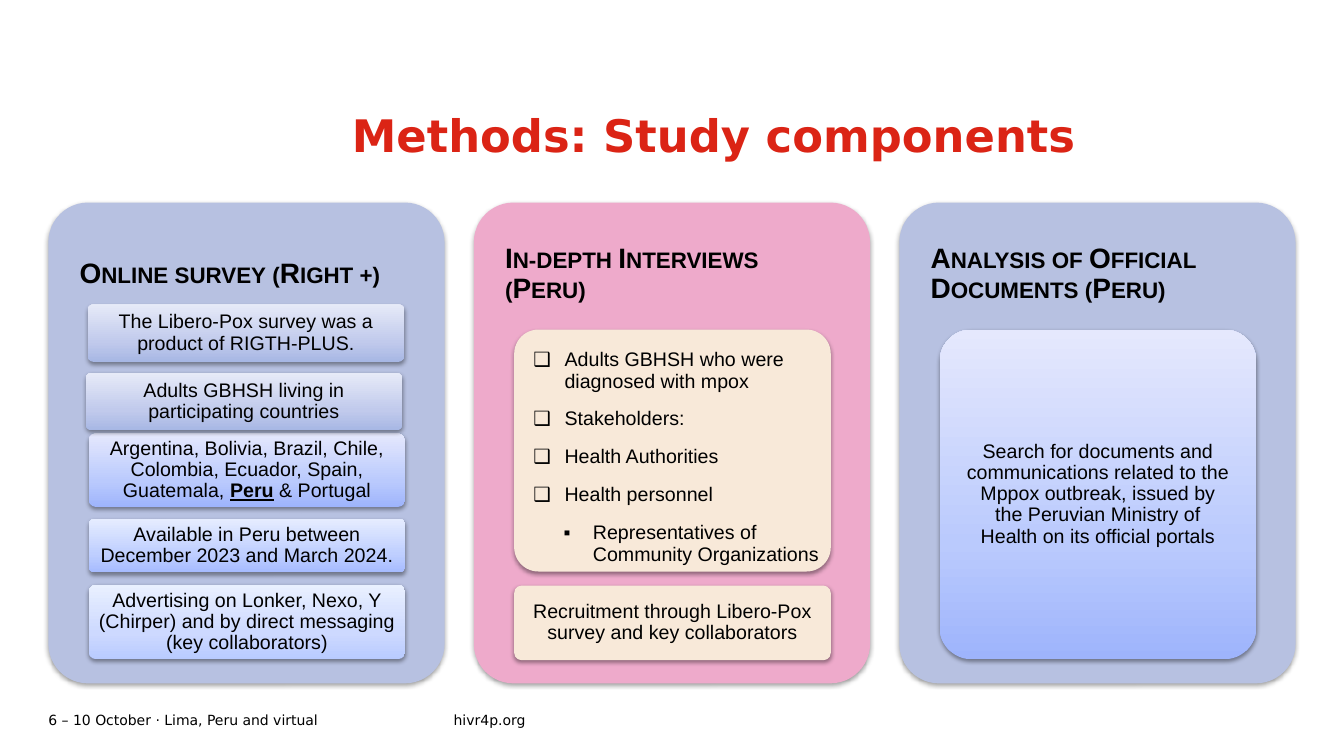
import dataclasses
import pptx
import pptx.dml.color
import pptx.enum.shapes
import pptx.enum.text
import pptx.oxml
import pptx.oxml.ns
import pptx.util

ALIGN = pptx.enum.text.PP_ALIGN
ANCHOR = pptx.enum.text.MSO_ANCHOR
NS = pptx.oxml.ns.nsdecls("a")


@dataclasses.dataclass(frozen=True)
class Theme:
    sans: str = "Arial"
    wide: str = "DejaVu Sans"
    ink: str = "000000"
    red: str = "DB2415"
    blue: str = "B7C1E1"
    pink: str = "EEAACB"
    cream: str = "F8E9D9"
    # Gradients run from the bottom edge to the top edge
    steel: tuple = ("A7B7E4", "C1CAEC", "E6EAF8")
    sky: tuple = ("9EB4FC", "BACAFD", "E5E8FD")
    azure: tuple = ("A6BBFF", "BFCFFF", "E5ECFF")
    pale: tuple = ("B9CBFF", "CDD9FF", "E9F0FF")
    title: int = 32
    head: int = 20
    body: int = 14
    foot: int = 10


THEME = Theme()

deck = pptx.Presentation()
deck.slide_width = pptx.util.Inches(13.33)
deck.slide_height = pptx.util.Inches(7.5)
# The slide is a grid of 133.3 columns by 75 rows
COL = deck.slide_width / 133.3
ROW = deck.slide_height / 75


@dataclasses.dataclass(frozen=True)
class Box:
    x: float
    y: float
    w: float
    h: float

    def sub(self, x, y, w, h):
        return Box(self.x + x, self.y + y, w, h)

    def emu(self):
        return (round(self.x * COL), round(self.y * ROW),
                round(self.w * COL), round(self.h * ROW))


def move(shape, box):
    shape.left, shape.top, shape.width, shape.height = box.emu()


def setup(frame, pad=(0, 0, 0, 0), anchor=ANCHOR.MIDDLE):
    """Wrap the frame and pad it (left, top, right, bottom, in columns)."""
    frame.word_wrap = True
    frame.auto_size = pptx.enum.text.MSO_AUTO_SIZE.NONE
    frame.vertical_anchor = anchor
    (frame.margin_left, frame.margin_top,
     frame.margin_right, frame.margin_bottom) = (round(p * COL) for p in pad)
    return frame


def style(para, size, face=THEME.sans, color=THEME.ink, bold=False,
          align=ALIGN.LEFT, line=0.9, after=0):
    para.alignment = align
    para.line_spacing = line
    para.space_before = pptx.util.Pt(0)
    para.space_after = pptx.util.Pt(after)
    font = para.font
    font.size, font.name, font.bold = pptx.util.Pt(size), face, bold
    font.color.rgb = pptx.dml.color.RGBColor.from_string(color)


def panel(slide, box, fill):
    """Rounded panel with a soft shadow; fill is a colour or a gradient."""
    kind = pptx.enum.shapes.MSO_SHAPE.ROUNDED_RECTANGLE
    shape = slide.shapes.add_shape(kind, *box.emu())
    shape.adjustments[0] = 0.1
    shape.line.fill.background()
    shape.shadow.inherit = False
    props = shape._element.spPr
    props.find(pptx.oxml.ns.qn("a:effectLst")).append(pptx.oxml.parse_xml(
        f'<a:outerShdw {NS} blurRad="40000" dist="20000" dir="5400000" '
        'rotWithShape="0"><a:srgbClr val="000000"><a:alpha val="38000"/>'
        '</a:srgbClr></a:outerShdw>'))
    if isinstance(fill, str):
        shape.fill.solid()
        shape.fill.fore_color.rgb = pptx.dml.color.RGBColor.from_string(fill)
    else:
        shape.fill.background()
        stops = "".join(
            f'<a:gs pos="{pos}000"><a:srgbClr val="{color}"/></a:gs>'
            for pos, color in zip((0, 35, 100), fill))
        blank = props.find(pptx.oxml.ns.qn("a:noFill"))
        props.replace(blank, pptx.oxml.parse_xml(
            f'<a:gradFill {NS} rotWithShape="1"><a:gsLst>{stops}</a:gsLst>'
            '<a:lin ang="16200000" scaled="0"/></a:gradFill>'))
    return shape


def tile(slide, box, fill, text, side=0.4):
    """Panel with centred text; a word between asterisks is stressed."""
    frame = setup(panel(slide, box, fill).text_frame, (side, 0.3, side, 0.3))
    para = frame.paragraphs[0]
    style(para, THEME.body, align=ALIGN.CENTER)
    for i, part in enumerate(text.split("*")):
        run = para.add_run()
        run.text = part
        if i % 2:
            run.font.bold = run.font.underline = True


def label(slide, box, text, size, pad=(0, 0, 0, 0), **look):
    frame = setup(slide.shapes.add_textbox(*box.emu()).text_frame, pad)
    para = frame.paragraphs[0]
    para.text = text
    style(para, size, **look)
    return para


def card(slide, box, fill, text, wide):
    """Large panel with a small-caps heading."""
    panel(slide, box, fill)
    para = label(slide, box.sub(0, 0, wide, 14.3), text, THEME.head,
                 (3.1, 1.2, 1.2, 1.2), bold=True)
    para.font._rPr.set("cap", "small")


def survey(slide, box):
    card(slide, box, THEME.blue, "Online survey (Right +)", box.w)
    rows = (
        (3.9, 10.1, 5.7, THEME.steel,
         "The Libero-Pox survey was a product of RIGTH-PLUS."),
        (4, 22.9, 7.3, THEME.sky,
         "Argentina, Bolivia, Brazil, Chile, Colombia, Ecuador, Spain, "
         "Guatemala, *Peru* & Portugal"),
        (4, 31.4, 5.3, THEME.azure,
         "Available in Peru between December 2023 and March 2024."),
        (4, 37.9, 7.4, THEME.pale,
         "Advertising on Lonker, Nexo, Y (Chirper) and by direct messaging "
         "(key collaborators)"),
        (3.7, 16.9, 5.7, THEME.steel,
         "Adults GBHSH living in participating countries"),
    )
    for x, y, h, fill, text in rows:
        tile(slide, box.sub(x, y, 31.4, h), fill, text)


def talks(slide, box, body):
    card(slide, box, THEME.pink, "In-depth Interviews (Peru)", 35.3)
    panel(slide, box.sub(4, 12.6, 31.4, 24), THEME.cream)
    # Bring the list in front of its panel
    slide.shapes._spTree.append(body._element)
    move(body, box.sub(4.3, 14, 30.8, 22.6))
    frame = setup(body.text_frame, (1.6, 0.3, 0.4, 0.3))
    items = (
        (0, "Adults GBHSH who were diagnosed with mpox"),
        (0, "Stakeholders:"),
        (0, "Health Authorities"),
        (0, "Health personnel"),
        (1, "Representatives of Community Organizations"),
    )
    # Mark, left edge, hanging indent and space after, by level
    marks = (("❑", 3.1, 3.1, 12), ("▪", 5.9, 2.9, 6))
    for i, (level, text) in enumerate(items):
        para = frame.add_paragraph() if i else frame.paragraphs[0]
        para.text, para.level = text, level
        mark, left, hang, after = marks[level]
        props = para._p.get_or_add_pPr()
        props.set("marL", str(round(left * COL)))
        props.set("indent", str(-round(hang * COL)))
        props.append(pptx.oxml.parse_xml(f'<a:buChar {NS} char="{mark}"/>'))
        style(para, THEME.body, after=after)
    tile(slide, box.sub(4, 38, 31.4, 7.4), THEME.cream,
         "Recruitment through Libero-Pox survey and key collaborators")


def papers(slide, box):
    card(slide, box, THEME.blue, "Analysis of Official Documents (Peru)", box.w)
    tile(slide, box.sub(4, 12.6, 31.4, 32.7), THEME.sky,
         "Search for documents and communications related to the Mppox "
         "outbreak, issued by the Peruvian Ministry of Health on its "
         "official portals", side=1.6)


def header(title, box):
    move(title, box)
    frame = setup(title.text_frame, anchor=ANCHOR.TOP)
    frame.text = "Methods: Study components"
    style(frame.paragraphs[0], THEME.title, THEME.wide, THEME.red, True)


def footer(slide, box):
    for x, w, text in ((0, 40.2, "6 – 10 October · Lima, Peru and virtual"),
                       (40.2, 19.3, "hivr4p.org")):
        label(slide, box.sub(x, 0, w, box.h), text, THEME.foot,
              face=THEME.wide, line=1)


def main():
    slide = deck.slides.add_slide(deck.slide_layouts[1])
    title, body = slide.placeholders
    left, middle, right = (Box(4.8 + 42.2 * i, 20.1, 39.3, 47.7)
                           for i in range(3))
    footer(slide, Box(4.8, 70.2, 59.5, 2.4))
    header(title, Box(34.9, 11.3, 83.5, 9.1))
    survey(slide, left)
    talks(slide, middle, body)
    papers(slide, right)
    deck.save("out.pptx")


if __name__ == "__main__":
    main()
